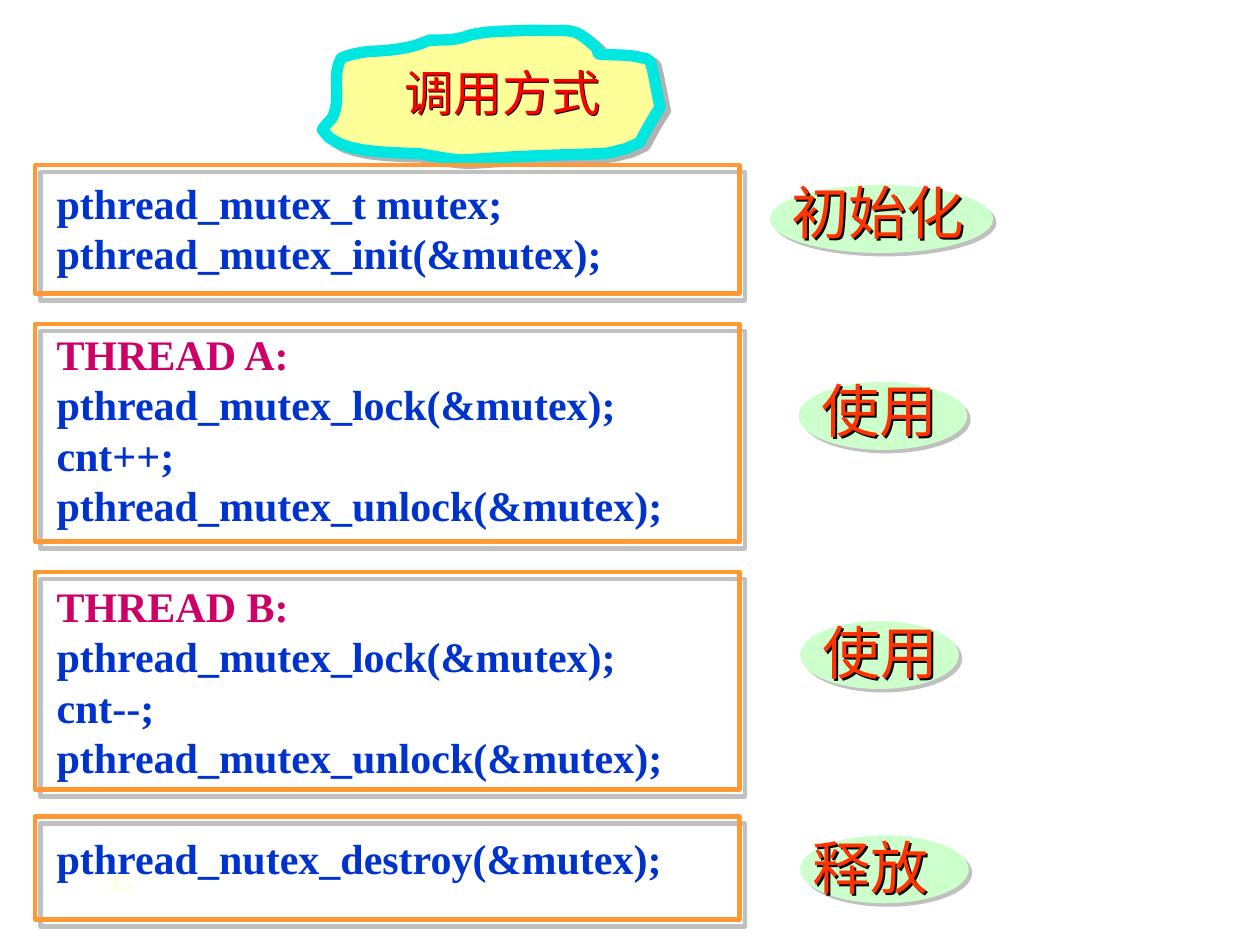
from lxml import etree
from pptx import Presentation
from pptx import util as u
from pptx.dml.color import RGBColor
from pptx.enum import shapes, text
from pptx.oxml import ns

Cm, Pt = u.Cm, u.Pt
FONT = "Times New Roman"
NUMBER = RGBColor(0xFF, 0xFF, 0xCC)
CODE = RGBColor(0x00, 0x33, 0xCC)
HEADING = RGBColor(0xCC, 0x00, 0x66)
TITLE = RGBColor(0xFF, 0x00, 0x00)
LABEL = RGBColor(0xFF, 0x33, 0x00)
CLOUD = RGBColor(0xFF, 0xFF, 0x99)
CLOUD_EDGE = RGBColor(0x00, 0xE6, 0xE1)
CLOUD_SHADOW = RGBColor(0xB2, 0xB2, 0xB2)
OVAL = RGBColor(0xCC, 0xFF, 0xCC)
FRAME = RGBColor(0xFF, 0x99, 0x33)
SHADOW = RGBColor(0xC0, 0xC0, 0xC0)
BLACK = RGBColor(0x00, 0x00, 0x00)

CLOUD_START = (10.67, 0.61)
CLOUD_CURVES = [
    ((10.13, 0.64), (9.91, 0.61), (9.47, 0.71)),
    ((9.22, 0.81), (8.99, 0.81), (8.66, 0.81)),
    ((8.26, 0.99), (7.9, 1.02), (7.42, 1.04)),
    ((7.21, 1.07), (7.09, 1.09), (6.88, 1.17)),
    ((6.68, 1.52), (6.88, 1.93), (6.73, 2.31)),
    ((6.71, 2.41), (6.55, 2.51), (6.5, 2.62)),
    ((6.78, 3.1), (7.82, 3.07), (8.46, 3.1)),
    ((9.75, 3.33), (8.74, 3.18), (12.12, 3.1)),
    ((12.27, 3.1), (12.5, 3.02), (12.62, 3)),
    ((12.73, 2.95), (12.9, 2.87), (12.9, 2.87)),
    ((13.03, 2.62), (13.16, 2.39), (13.31, 2.16)),
    ((13.28, 2.08), (13.16, 1.35), (13.11, 1.24)),
    ((13.08, 1.22), (13.03, 1.17), (12.95, 1.17)),
    ((12.67, 1.09), (12.37, 1.12), (12.07, 1.09)),
    ((12.01, 0.97), (12.07, 0.99), (11.94, 0.89)),
    ((11.53, 0.53), (11.58, 0.64), (10.67, 0.61)),
]

BLOCKS = [
    ["pthread_mutex_t mutex;", "pthread_mutex_init(&mutex);"],
    ["THREAD A:", "pthread_mutex_lock(&mutex);", "cnt++;", "pthread_mutex_unlock(&mutex);"],
    ["THREAD B:", "pthread_mutex_lock(&mutex);", "cnt--;", "pthread_mutex_unlock(&mutex);"],
    ["pthread_nutex_destroy(&mutex);"],
]

STEPS = [
    ("初始化", (3.33, 2.59), (15.52, 3.73, 4.5), (15.7, 3.66, 4.39)),
    ("使用", (6.53, 4.39), (16.1, 7.7, 3.4), (16.31, 7.65, 3)),
    ("使用", (11.53, 4.39), (16.13, 12.52, 3.2), (16.33, 12.52, 3.18)),
    ("释放", (16.46, 2.08), (16.13, 16.84, 3.4), (16.13, 16.87, 3.38)),
]


def put(obj, **fmt):
    for name, value in fmt.items():
        setattr(obj, name, value)


def add_shadow(sp, color, dist, angle):
    sp.shadow.inherit = False
    effects = sp.element.spPr.find(ns.qn("a:effectLst"))
    outer = etree.SubElement(effects, ns.qn("a:outerShdw"), blurRad="0",
                             dist=str(Pt(dist)), dir=str(angle * 60000),
                             algn="ctr", rotWithShape="0")
    etree.SubElement(outer, ns.qn("a:srgbClr"), val=str(color))


def paint(sp, fill=None, line=None, width=0):
    if fill is None:
        sp.fill.background()
    else:
        sp.fill.solid()
        sp.fill.fore_color.rgb = fill
    if line is None:
        sp.line.fill.background()
    else:
        sp.line.color.rgb = line
        sp.line.width = Pt(width)


def add_run(p, words, size, color, bold=False):
    r = p.add_run()
    r.text = words
    put(r.font, name=FONT, size=Pt(size), bold=bold)
    r.font.color.rgb = color


def add_text(s, box, words, size, color):
    sp = s.shapes.add_textbox(*map(Cm, box))
    sp.text_frame.word_wrap = True
    add_run(sp.text_frame.paragraphs[0], words, size, color)
    return sp


def add_code(s):
    tf = s.shapes.add_textbox(*map(Cm, (0.89, 3.45, 12.85, 14.63))).text_frame
    put(tf, word_wrap=False)
    p = tf.paragraphs[0]
    for b, lines in enumerate(BLOCKS):
        for i, words in enumerate(lines):
            if b or i:
                p = tf.add_paragraph()
            p.line_spacing = Pt(28.8)
            if b and i == 0:
                p.space_before = Pt(28.8)
            color = HEADING if words.startswith("THREAD") else CODE
            add_run(p, words, 24, color, True)


def curve_points(start, curves, steps=8):
    for c1, c2, end in curves:
        for n in range(1, steps + 1):
            t = n / steps
            k = 1 - t
            yield tuple(Cm(k**3 * a + 3 * k * k * t * b + 3 * k * t * t * c + t**3 * d)
                        for a, b, c, d in zip(start, c1, c2, end))
        start = end


def add_cloud(s):
    builder = s.shapes.build_freeform(*map(Cm, CLOUD_START))
    builder.add_line_segments(list(curve_points(CLOUD_START, CLOUD_CURVES)), close=True)
    sp = builder.convert_to_shape()
    paint(sp, CLOUD, CLOUD_EDGE, 6.5)
    add_shadow(sp, CLOUD_SHADOW, 3.6, 34)


def add_title(s, words):
    sp = s.shapes.title
    put(sp, left=Cm(7.9), top=Cm(1.12), width=Cm(4.75), height=Cm(1.45))
    put(sp.text_frame, word_wrap=True, auto_size=text.MSO_AUTO_SIZE.NONE,
        vertical_anchor=text.MSO_ANCHOR.MIDDLE)
    p = sp.text_frame.paragraphs[0]
    p.alignment = text.PP_ALIGN.LEFT
    add_run(p, words, 28, TITLE)
    add_shadow(sp, BLACK, 1.2, 45)
    s.shapes.element.append(sp.element)


def add_step(s, words, frame, oval, label):
    top, height = frame
    sp = s.shapes.add_shape(shapes.MSO_SHAPE.RECTANGLE,
                            *map(Cm, (0.71, top, 14.2, height)))
    paint(sp, line=FRAME, width=2.5)
    add_shadow(sp, SHADOW, 5, 53)
    sp = s.shapes.add_shape(shapes.MSO_SHAPE.OVAL, *map(Cm, (*oval, 1.37)))
    paint(sp, OVAL)
    add_shadow(sp, SHADOW, 2.8, 45)
    sp = add_text(s, (*label, 1.45), words, 33, LABEL)
    sp.rotation = 0.2
    sp.text_frame.paragraphs[0].line_spacing = 0.85
    add_shadow(sp, BLACK, 1.6, 45)


def main():
    prs = Presentation()
    put(prs, slide_width=Cm(25.4), slide_height=Cm(19.05))
    s = prs.slides.add_slide(prs.slide_layouts[5])
    add_text(s, (1.9, 17.35, 5.28, 1.27), "35", 14, NUMBER)
    add_code(s)
    add_cloud(s)
    add_title(s, "调用方式")
    for step in STEPS:
        add_step(s, *step)
    prs.save("out.pptx")


if __name__ == "__main__":
    main()
